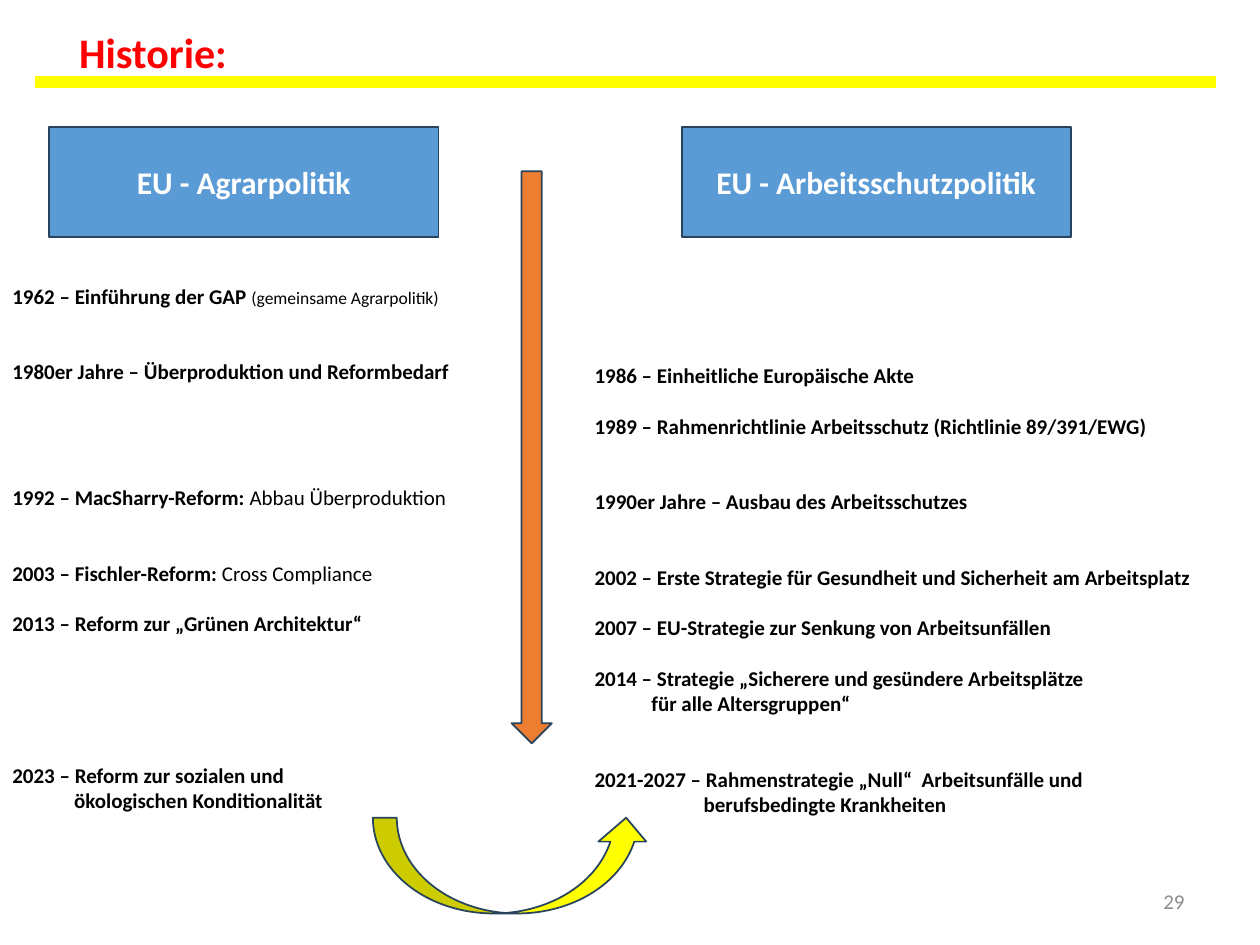
"""Build the slide that sets EU farm policy beside EU work safety policy."""

from dataclasses import dataclass

from lxml import etree
from pptx import Presentation
from pptx.dml.color import RGBColor
from pptx.enum.shapes import MSO_CONNECTOR, MSO_SHAPE
from pptx.enum.text import MSO_ANCHOR, PP_ALIGN
from pptx.oxml.ns import qn
from pptx.shapes.autoshape import Shape
from pptx.slide import Slide
from pptx.text.text import TextFrame, _Paragraph
from pptx.util import Pt

STRAIGHT = MSO_CONNECTOR.STRAIGHT
RECTANGLE = MSO_SHAPE.RECTANGLE
DOWN_ARROW = MSO_SHAPE.DOWN_ARROW
CURVED_ARROW = MSO_SHAPE.CURVED_UP_ARROW
TOP, MIDDLE = MSO_ANCHOR.TOP, MSO_ANCHOR.MIDDLE
LEFT, CENTER, RIGHT = PP_ALIGN.LEFT, PP_ALIGN.CENTER, PP_ALIGN.RIGHT

BLACK = RGBColor(0x00, 0x00, 0x00)
WHITE = RGBColor(0xFF, 0xFF, 0xFF)
RED = RGBColor(0xFF, 0x00, 0x00)
YELLOW = RGBColor(0xFF, 0xFF, 0x00)
GRAY = RGBColor(0x8C, 0x8C, 0x8C)
BLUE = RGBColor(0x5B, 0x9B, 0xD5)
ORANGE = RGBColor(0xED, 0x7D, 0x31)
OUTLINE = RGBColor(0x28, 0x44, 0x5D)

FONT = "Calibri"
LINE_PITCH = 14.4
INSET = 3.6


@dataclass(frozen=True)
class Area:
    """Position and size in points."""

    left: float
    top: float
    width: float
    height: float

    def lengths(self) -> tuple[Pt, Pt, Pt, Pt]:
        """Return the four values as lengths."""
        return Pt(self.left), Pt(self.top), Pt(self.width), Pt(self.height)


@dataclass(frozen=True)
class Entry:
    """One line of a timeline, with the free lines above it."""

    heading: str
    detail: str = ""
    gap: int = 0
    indent: float = 0
    detail_size: float = 12


@dataclass(frozen=True)
class Timeline:
    """One policy with its heading box and dated entries."""

    title: str
    title_area: Area
    area: Area
    entries: tuple[Entry, ...]


TIMELINES = (
    Timeline(
        "EU - Agrarpolitik",
        Area(28.08, 72.72, 222.48, 62.64),
        Area(0, 158.4, 319.68, 326.88),
        (
            Entry("1962 – Einführung der GAP ", "(gemeinsame Agrarpolitik)", detail_size=10),
            Entry("1980er Jahre – Überproduktion und Reformbedarf", gap=2),
            Entry("1992 – MacSharry-Reform: ", "Abbau Überproduktion", gap=4),
            Entry("2003 – Fischler-Reform: ", "Cross Compliance", gap=2),
            Entry("2013 – Reform zur „Grünen Architektur“", gap=1),
            Entry("2023 – Reform zur sozialen und", gap=5),
            Entry("ökologischen Konditionalität", indent=35.3),
        ),
    ),
    Timeline(
        "EU - Arbeitsschutzpolitik",
        Area(389.52, 72.72, 222.48, 62.64),
        Area(332.64, 160.56, 723.6, 312.48),
        (
            Entry("1986 – Einheitliche Europäische Akte", gap=3),
            Entry("1989 – Rahmenrichtlinie Arbeitsschutz (Richtlinie 89/391/EWG)", gap=1),
            Entry("1990er Jahre – Ausbau des Arbeitsschutzes", gap=2),
            Entry("2002 – Erste Strategie für Gesundheit und Sicherheit am Arbeitsplatz", gap=2),
            Entry("2007 – EU-Strategie zur Senkung von Arbeitsunfällen", gap=1),
            Entry("2014 – Strategie „Sicherere und gesündere Arbeitsplätze", gap=1),
            Entry("für alle Altersgruppen“", indent=32.5),
            Entry("2021-2027 – Rahmenstrategie „Null“  Arbeitsunfälle und", gap=2),
            Entry("berufsbedingte Krankheiten", indent=62.3),
        ),
    ),
)


def add_span(para: _Paragraph, text: str, *, size: float = 12,
             color: RGBColor = BLACK, bold: bool = False) -> None:
    """Add formatted text to a paragraph."""
    span = para.add_run()
    span.text = text
    span.font.name = FONT
    span.font.size = Pt(size)
    span.font.bold = bold
    span.font.color.rgb = color


def add_box(page: Slide, area: Area, anchor: MSO_ANCHOR = TOP) -> TextFrame:
    """Add a wrapping text box and return its frame."""
    frame = page.shapes.add_textbox(*area.lengths()).text_frame
    frame.word_wrap = True
    frame.vertical_anchor = anchor
    return frame


def add_figure(page: Slide, kind: MSO_SHAPE, area: Area, fill: RGBColor) -> Shape:
    """Add a filled and outlined preset shape."""
    figure = page.shapes.add_shape(kind, *area.lengths())
    figure.shadow.inherit = False
    figure.fill.solid()
    figure.fill.fore_color.rgb = fill
    figure.line.color.rgb = OUTLINE
    figure.line.width = Pt(1)
    return figure


def add_rule(page: Slide) -> None:
    """Add the yellow rule below the title."""
    rule = page.shapes.add_connector(STRAIGHT, Pt(20.16), Pt(46.8), Pt(694.8), Pt(46.8))
    rule.line.color.rgb = YELLOW
    rule.line.width = Pt(6.5)
    etree.SubElement(rule._element.spPr, qn("a:effectLst"))


def add_timeline(page: Slide, timeline: Timeline) -> None:
    """Add a heading box and the dated entries below it."""
    title = add_figure(page, RECTANGLE, timeline.title_area, BLUE).text_frame
    title.vertical_anchor = MIDDLE
    title.paragraphs[0].alignment = CENTER
    add_span(title.paragraphs[0], timeline.title, size=18, color=WHITE, bold=True)

    frame = add_box(page, timeline.area)
    frame.margin_top = Pt(INSET + timeline.entries[0].gap * LINE_PITCH)
    for index, entry in enumerate(timeline.entries):
        para = frame.add_paragraph() if index else frame.paragraphs[0]
        para.alignment = LEFT
        if index:
            para.space_before = Pt(entry.gap * LINE_PITCH)
        if entry.indent:
            para._p.get_or_add_pPr().set("marL", str(Pt(entry.indent)))
        add_span(para, entry.heading, bold=True)
        if entry.detail:
            add_span(para, entry.detail, size=entry.detail_size)


def main() -> None:
    """Build and save the deck."""
    deck = Presentation()
    deck.slide_width, deck.slide_height = Pt(720), Pt(540)
    page = deck.slides.add_slide(deck.slide_layouts[6])

    add_rule(page)
    title = add_box(page, Area(38.16, 11.52, 662.4, 36)).paragraphs[0]
    add_span(title, "Historie:", size=24, color=RED, bold=True)
    number = add_box(page, Area(516.24, 500.4, 167.76, 28.8), MIDDLE).paragraphs[0]
    number.alignment = RIGHT
    add_span(number, "29", color=GRAY)

    for timeline in TIMELINES:
        add_timeline(page, timeline)
    add_figure(page, DOWN_ARROW, Area(292.32, 97.92, 23.04, 326.88), ORANGE)
    add_figure(page, CURVED_ARROW, Area(213.12, 467.28, 158.4, 54.72), YELLOW)
    deck.save("out.pptx")


if __name__ == "__main__":
    main()
